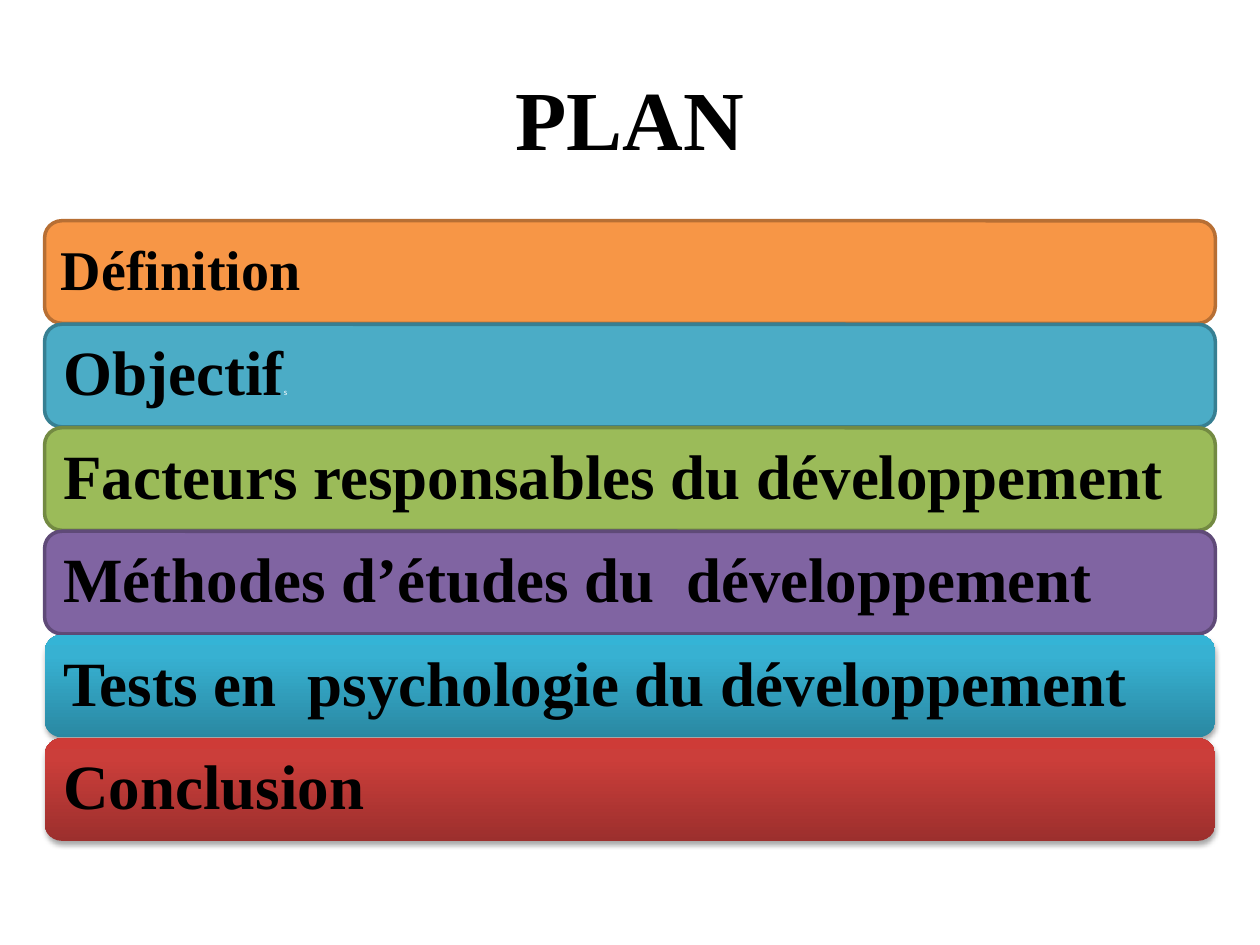
import copy
from dataclasses import dataclass

import pptx
import pptx.dml.color
import pptx.enum.shapes
import pptx.enum.text
import pptx.oxml
import pptx.oxml.ns
import pptx.util

Cm = pptx.util.Cm
Pt = pptx.util.Pt
MIDDLE = pptx.enum.text.MSO_ANCHOR.MIDDLE


@dataclass(frozen=True)
class Theme:
    font: str = "Times New Roman"
    suffix_font: str = "Calibri"
    ink: str = "000000"
    suffix_ink: str = "FFFFFF"
    title_size: int = 48
    first_size: int = 32
    topic_size: int = 36
    suffix_size: int = 5
    outline_width: int = 2
    orange: tuple = ("F79646", "B76F34")
    teal: tuple = ("4BACC6", "377F92")
    green: tuple = ("9BBB59", "738A42")
    purple: tuple = ("8064A2", "5F4A78")
    blue_shades: tuple = ("2A88A2", "37B1D2", "34B4D6")
    red_shades: tuple = ("9C2F2D", "CB3E3A", "CE3B37")
    shade_positions: tuple = (0, 0.8, 1)


THEME = Theme()

TOPICS = [
    ("Définition", "", THEME.first_size, THEME.orange),
    ("Objectif", "s", THEME.topic_size, THEME.teal),
    ("Facteurs responsables du développement", "", THEME.topic_size, THEME.green),
    ("Méthodes d’études du  développement", "", THEME.topic_size, THEME.purple),
    ("Tests en  psychologie du développement", "", THEME.topic_size, THEME.blue_shades),
    ("Conclusion", "", THEME.topic_size, THEME.red_shades),
]


def rgb(value):
    return pptx.dml.color.RGBColor.from_string(value)


def set_font(font, name, size, color, bold):
    font.name = name
    font.size = Pt(size)
    font.color.rgb = rgb(color)
    font.bold = bold


def paint_flat(bar, fill, outline):
    bar.fill.solid()
    bar.fill.fore_color.rgb = rgb(fill)
    bar.line.color.rgb = rgb(outline)
    bar.line.width = Pt(THEME.outline_width)


def paint_shaded(bar, shades):
    bar.line.fill.background()
    bar.fill.gradient()
    bar.fill.gradient_angle = 90
    properties = bar._element.spPr
    stops = properties.find(".//" + pptx.oxml.ns.qn("a:gsLst"))
    stops.append(copy.deepcopy(stops[-1]))
    for stop, position, shade in zip(bar.fill.gradient_stops, THEME.shade_positions, shades):
        stop.position = position
        stop.color.rgb = rgb(shade)
    properties.find(pptx.oxml.ns.qn("a:effectLst")).append(pptx.oxml.parse_xml(
        f'<a:outerShdw {pptx.oxml.ns.nsdecls("a")} blurRad="40000" dist="23000" '
        'dir="5400000" rotWithShape="0"><a:srgbClr val="000000">'
        '<a:alpha val="35000"/></a:srgbClr></a:outerShdw>'))


def add_topic(slide, left, top, width, height, label, suffix, size, colors):
    bar = slide.shapes.add_shape(
        pptx.enum.shapes.MSO_SHAPE.ROUNDED_RECTANGLE, left, top, width, height)
    bar.shadow.inherit = False
    if len(colors) == 2:
        paint_flat(bar, *colors)
    else:
        paint_shaded(bar, colors)
    frame = bar.text_frame
    frame.word_wrap = True
    frame.vertical_anchor = MIDDLE
    inset = Cm(0.23 if size == THEME.first_size else 0.28)
    frame.margin_left = frame.margin_right = inset
    frame.margin_top = frame.margin_bottom = inset
    paragraph = frame.paragraphs[0]
    paragraph.alignment = pptx.enum.text.PP_ALIGN.LEFT
    paragraph.line_spacing = 0.9
    set_font(paragraph.font, THEME.font, size, THEME.ink, True)
    paragraph.add_run().text = label
    if suffix:
        ending = paragraph.add_run()
        ending.text = suffix
        set_font(ending.font, THEME.suffix_font, THEME.suffix_size, THEME.suffix_ink, False)


def add_topics(slide, left, top, width, height):
    gap = Cm(0.02)
    bar_height = (height - gap * (len(TOPICS) - 1)) // len(TOPICS)
    for row, topic in enumerate(TOPICS):
        add_topic(slide, left, top + row * (bar_height + gap), width, bar_height, *topic)


def place_title(slide, left, top, width, height):
    title = slide.shapes.title
    title.left, title.top, title.width, title.height = left, top, width, height
    title.text_frame.text = "PLAN"
    title.text_frame.vertical_anchor = MIDDLE
    paragraph = title.text_frame.paragraphs[0]
    paragraph.alignment = pptx.enum.text.PP_ALIGN.CENTER
    set_font(paragraph.font, THEME.font, THEME.title_size, THEME.ink, True)


def main():
    deck = pptx.Presentation()
    deck.slide_width = Cm(25.4)
    deck.slide_height = Cm(19.05)
    slide = deck.slides.add_slide(deck.slide_layouts.get_by_name("Title Only"))
    place_title(slide, Cm(1.27), Cm(0.76), Cm(22.86), Cm(3.18))
    add_topics(slide, Cm(0.9), Cm(4.45), Cm(23.6), Cm(12.5))
    deck.save("out.pptx")


if __name__ == "__main__":
    main()
